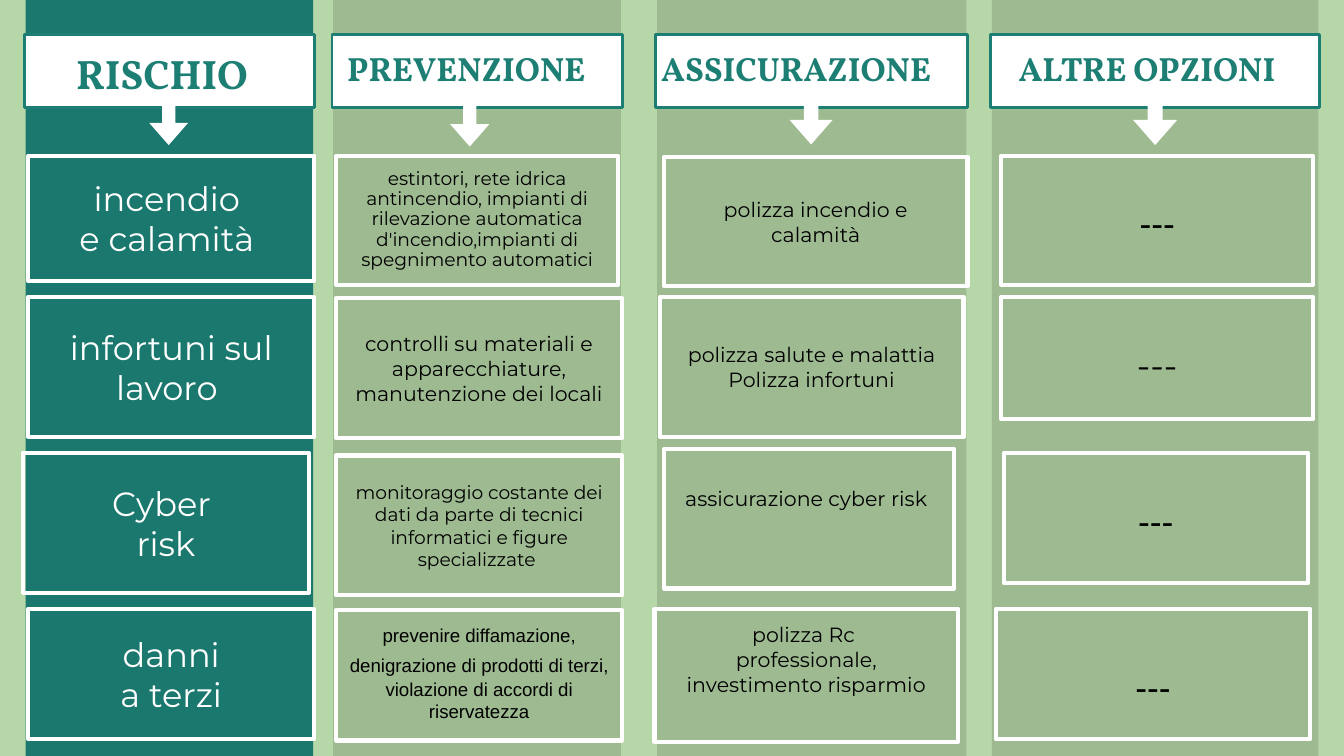
from pptx import Presentation
from pptx.dml.color import RGBColor
from pptx.enum.shapes import MSO_SHAPE
from pptx.enum.text import MSO_ANCHOR, PP_ALIGN
from pptx.util import Inches, Pt

RECT, ARROW = MSO_SHAPE.RECTANGLE, MSO_SHAPE.RIGHT_ARROW
TOP, MIDDLE, CENTER = MSO_ANCHOR.TOP, MSO_ANCHOR.MIDDLE, PP_ALIGN.CENTER

THEME = {
    "background": "B6D7A8", "risk_band": "1B786E", "band": "9EBA91",
    "white": "FFFFFF", "black": "000000", "title": "1D7E74",
    "title_font": "Vollkorn", "body_font": "Montserrat", "plain_font": "Arial",
    "risk_size": 18, "text_size": 11, "small_size": 10, "dash_size": 19,
    "gap_size": 14, "header_line": 1.5, "cell_line": 2.25,
}
PADDING = 0.1
SLIDE_WIDTH = 10
SLIDE_HEIGHT = SLIDE_WIDTH * 9 / 16

# Columns: title, size, band (left, width), title box, arrow box before rotation
COLUMNS = [
    ("RISCHIO", 22, (0.19, 2.14), (0.25, 0.26, 1.91, 0.93), (1.07, 0.75, 0.37, 0.29)),
    ("PREVENZIONE", 18, (2.48, 2.14), (2.48, 0.26, 1.98, 0.54), (3.3, 0.75, 0.39, 0.29)),
    ("ASSICURAZIONE ", 18, (4.89, 2.3), (4.8, 0.26, 2.3, 0.93), (5.85, 0.73, 0.37, 0.32)),
    ("ALTRE OPZIONI", 18, (7.38, 2.43), (7.45, 0.26, 2.17, 0.93), (8.41, 0.73, 0.37, 0.33)),
]

# Text styles of the cells
RISK = {"size": "risk_size", "font": "body_font", "color": "white"}
TEXT = {"size": "text_size", "font": "body_font", "color": "black"}
SMALL = {**TEXT, "size": "small_size"}
PLAIN = {**SMALL, "font": "plain_font"}
GAP = {**PLAIN, "size": "gap_size"}
DASH = {**PLAIN, "size": "dash_size"}
DASH_LIGHT = {**DASH, "font": "body_font"}

# Cells: box, style, paragraphs, layout options
CELLS = [
    # incendio e calamità
    ((0.21, 1.16, 2.13, 0.93), RISK, ["incendio ", "e calamità "], {}),
    ((2.5, 1.16, 2.1, 0.96), SMALL,
     ["estintori, rete idrica antincendio, impianti di rilevazione automatica "
      "d'incendio,impianti di spegnimento automatici"],
     {"anchor": TOP, "spacing": 0.9}),
    ((4.94, 1.17, 2.26, 0.96), TEXT, ["polizza incendio e calamità"], {}),
    ((7.45, 1.16, 2.32, 0.96), DASH, ["---"], {"anchor": TOP, "top": 0.34}),
    # infortuni sul lavoro
    ((0.21, 2.21, 2.13, 1.04), RISK, ["infortuni sul lavoro "], {}),
    ((2.5, 2.22, 2.13, 1.04), TEXT,
     ["controlli su materiali e apparecchiature, manutenzione dei locali"], {}),
    ((4.91, 2.21, 2.26, 1.04), TEXT,
     ["polizza salute e malattia", "Polizza infortuni"], {}),
    ((7.45, 2.21, 2.32, 0.91), DASH_LIGHT, ["---"], {"anchor": TOP, "top": 0.34}),
    # Cyber risk
    ((0.17, 3.37, 2.13, 1.04), RISK, ["Cyber ", "risk"], {}),
    ((2.5, 3.39, 2.13, 1.04), SMALL,
     ["monitoraggio costante dei dati da parte di tecnici informatici e figure "
      "specializzate "], {}),
    ((4.94, 3.34, 2.16, 1.04), TEXT, ["assicurazione cyber risk "],
     {"anchor": TOP, "top": 0.28}),
    ((7.47, 3.37, 2.26, 0.97), DASH, ["---"], {"anchor": TOP, "top": 0.34}),
    # danni a terzi
    ((0.21, 4.53, 2.13, 0.97), RISK, ["danni", " a terzi "], {}),
    ((2.5, 4.54, 2.13, 0.97), PLAIN,
     [[("prevenire diffamazione, denigrazione di prodotti di terzi,", PLAIN),
       (" ", GAP), ("violazione di accordi di riservatezza", PLAIN)]],
     {"anchor": TOP}),
    ((4.87, 4.53, 2.26, 0.99), TEXT,
     ["polizza Rc ", "professionale,", "investimento risparmio"], {"anchor": TOP}),
    ((7.41, 4.53, 2.34, 0.97), DASH, ["---"], {"anchor": TOP, "top": 0.42}),
]


def rgb(name):
    return RGBColor.from_string(THEME[name])


def add_box(s, kind, box, fill=None, line=None, width=None):
    sp = s.shapes.add_shape(kind, *map(Inches, box))
    sp.shadow.inherit = False
    if fill:
        sp.fill.solid()
        sp.fill.fore_color.rgb = rgb(fill)
    else:
        sp.fill.background()
    if line:
        sp.line.color.rgb = rgb(line)
        sp.line.width = Pt(THEME[width])
    else:
        sp.line.fill.background()
    return sp


def write(sp, paragraphs, style, anchor=MIDDLE, top=PADDING, spacing=None):
    tf = sp.text_frame
    frame = {"word_wrap": True, "vertical_anchor": anchor, "margin_top": Inches(top)}
    frame.update({f"margin_{side}": Inches(PADDING) for side in ("left", "right", "bottom")})
    for name, value in frame.items():
        setattr(tf, name, value)
    for i, content in enumerate(paragraphs):
        p = tf.add_paragraph() if i else tf.paragraphs[0]
        p.alignment = CENTER
        if spacing:
            p.line_spacing = spacing
        runs = [(content, style)] if isinstance(content, str) else content
        for text, look in runs:
            r = p.add_run()
            r.text = text
            size = look["size"]
            font = {"name": THEME[look["font"]], "bold": look.get("bold", False),
                    "size": Pt(THEME.get(size, size))}
            for name, value in font.items():
                setattr(r.font, name, value)
            r.font.color.rgb = rgb(look["color"])


def add_column(s, title, size, band, title_box, arrow_box, band_fill):
    left, width = band
    add_box(s, RECT, (left, 0, width, SLIDE_HEIGHT), band_fill)
    header = (left - 0.01, 0.26, width + 0.02, 0.54)
    add_box(s, RECT, header, "white", "title", "header_line")
    label = s.shapes.add_textbox(*map(Inches, title_box))
    style = {"size": size, "font": "title_font", "color": "title", "bold": True}
    write(label, [title], style, TOP)
    arrow = add_box(s, ARROW, arrow_box, "white")
    arrow.rotation = 90
    arrow.adjustments[0], arrow.adjustments[1] = 0.34, 0.57


def main():
    prs = Presentation()
    prs.slide_width, prs.slide_height = Inches(SLIDE_WIDTH), Inches(SLIDE_HEIGHT)
    s = prs.slides.add_slide(prs.slide_layouts[6])
    s.background.fill.solid()
    s.background.fill.fore_color.rgb = rgb("background")

    # Column bands with headers
    for i, column in enumerate(COLUMNS):
        add_column(s, *column, "band" if i else "risk_band")

    # Outlined cells
    for box, style, paragraphs, options in CELLS:
        cell = add_box(s, RECT, box, line="white", width="cell_line")
        write(cell, paragraphs, style, **options)

    prs.save("out.pptx")


if __name__ == "__main__":
    main()
